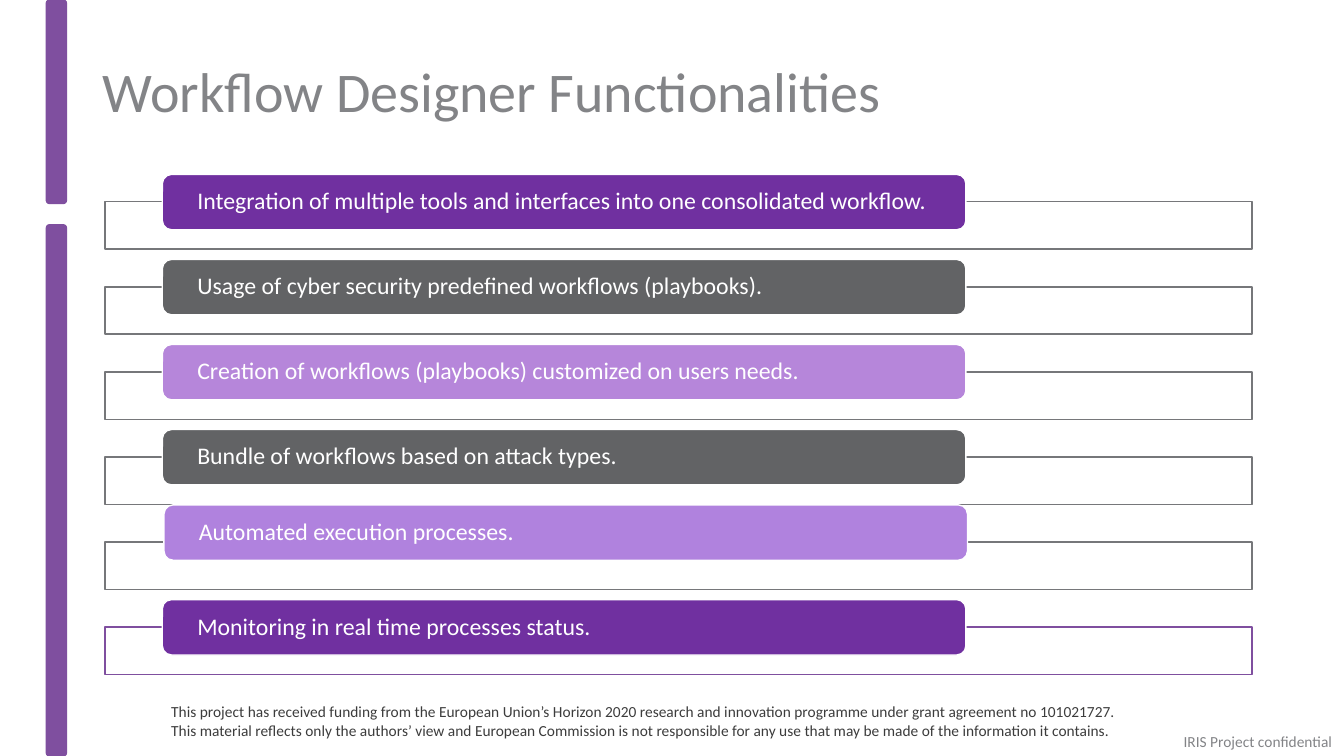
from dataclasses import dataclass

from lxml.etree import SubElement
from pptx import Presentation
from pptx.dml.color import RGBColor
from pptx.enum.shapes import MSO_SHAPE as Shape
from pptx.enum.text import MSO_ANCHOR as Anchor, MSO_AUTO_SIZE as AutoSize, PP_ALIGN as Align
from pptx.oxml.ns import qn
from pptx.shapes.autoshape import Shape as AutoShape
from pptx.slide import Slide
from pptx.text.text import TextFrame
from pptx.util import Inches, Pt

FONT = "Calibri"
WHITE = RGBColor(0xFF, 0xFF, 0xFF)
PURPLE = RGBColor(0x70, 0x30, 0xA0)
BAR_PURPLE = RGBColor(0x7F, 0x4F, 0x9F)
LILAC = RGBColor(0xB6, 0x86, 0xDA)
LAVENDER = RGBColor(0xB0, 0x82, 0xDE)
DARK_GRAY = RGBColor(0x62, 0x63, 0x65)
LINE_GRAY = RGBColor(0x76, 0x77, 0x7A)
TITLE_GRAY = RGBColor(0x83, 0x84, 0x87)
NOTE_GRAY = RGBColor(0x3C, 0x3C, 0x3C)

WIDTH, HEIGHT = Inches(13.33), Inches(7.5)
ROW_PITCH = 11.25


@dataclass(frozen=True)
class Area:
    """Percentages of the slide's width and height."""
    left: float
    top: float
    width: float
    height: float

    def moved(self, dx: float, dy: float) -> "Area":
        return Area(self.left + dx, self.top + dy, self.width, self.height)

    def emu(self) -> tuple[int, int, int, int]:
        return (int(WIDTH * self.left / 100), int(HEIGHT * self.top / 100),
                int(WIDTH * self.width / 100), int(HEIGHT * self.height / 100))


@dataclass(frozen=True)
class Feature:
    text: str
    fill: RGBColor
    line: RGBColor = LINE_GRAY
    dx: float = 0
    dy: float = 0


@dataclass(frozen=True)
class Note:
    text: str
    area: Area
    color: RGBColor
    wrap: bool


TITLE = Area(6.9, 4.93, 71.27, 15.07)
FRAME = Area(7.8, 26.7, 85.37, 6.27)
LABEL = Area(12.08, 23.07, 59.79, 7.33)
BARS = [Area(3.45, 29.73, 1.5, 70.27), Area(3.45, 0, 1.5, 26.93)]

FEATURES = [
    Feature("Integration of multiple tools and interfaces into one consolidated workflow.", PURPLE),
    Feature("Usage of cyber security predefined workflows (playbooks).", DARK_GRAY),
    Feature("Creation of workflows (playbooks) customized on users needs.", LILAC),
    Feature("Bundle of workflows based on attack types.", DARK_GRAY),
    Feature("Automated execution processes.", LAVENDER, dx=0.12, dy=-1.28),
    Feature("Monitoring in real time processes status.", PURPLE, BAR_PURPLE),
]

NOTES = [
    Note("This project has received funding from the European Union’s Horizon 2020 research and "
         "innovation programme under grant agreement no 101021727. This material reflects only "
         "the authors’ view and European Commission is not responsible for any use that may be "
         "made of the information it contains.", Area(12, 92.27, 72.54, 6), NOTE_GRAY, True),
    Note("IRIS Project confidential", Area(87.32, 96.13, 12.68, 3.87), TITLE_GRAY, False),
]


def write(tf: TextFrame, text: str, size: float, color: RGBColor, spacing: float = 1.0) -> None:
    tf.text = text
    p = tf.paragraphs[0]
    p.alignment = Align.LEFT
    p.line_spacing = spacing
    font = p.runs[0].font
    font.name, font.size = FONT, Pt(size)
    font.color.rgb = color


def add_box(s: Slide, kind: Shape, area: Area, fill: RGBColor, line: RGBColor) -> AutoShape:
    sp = s.shapes.add_shape(kind, *area.emu())
    sp.shadow.inherit = False
    sp.fill.solid()
    sp.fill.fore_color.rgb = fill
    sp.line.color.rgb = line
    sp.line.width = Pt(1)
    return sp


def add_note(s: Slide, note: Note) -> None:
    tf = s.shapes.add_textbox(*note.area.emu()).text_frame
    tf.word_wrap = note.wrap
    write(tf, note.text, 11, note.color)


def add_title(s: Slide, text: str) -> None:
    sp = s.shapes.title
    sp.left, sp.top, sp.width, sp.height = TITLE.emu()
    tf = sp.text_frame
    tf.auto_size = AutoSize.NONE
    tf.vertical_anchor = Anchor.MIDDLE
    write(tf, text, 40, TITLE_GRAY, 0.9)


def add_feature(s: Slide, row: int, feature: Feature) -> None:
    drop = row * ROW_PITCH
    frame = add_box(s, Shape.RECTANGLE, FRAME.moved(0, drop), WHITE, feature.line)
    color = frame.fill._xPr.find(qn("a:solidFill"))[0]
    SubElement(color, qn("a:alpha"), val="90000")
    label = add_box(s, Shape.ROUNDED_RECTANGLE, LABEL.moved(feature.dx, drop + feature.dy),
                    feature.fill, WHITE)
    tf = label.text_frame
    tf.word_wrap = True
    tf.vertical_anchor = Anchor.MIDDLE
    tf.margin_left = tf.margin_right = int(WIDTH * 0.024)
    tf.margin_top = tf.margin_bottom = 0
    write(tf, feature.text, 17, WHITE, 0.9)


def main() -> None:
    prs = Presentation()
    prs.slide_width, prs.slide_height = WIDTH, HEIGHT
    s = prs.slides.add_slide(prs.slide_layouts[5])
    for note in NOTES:
        add_note(s, note)
    for area in BARS:
        add_box(s, Shape.ROUNDED_RECTANGLE, area, BAR_PURPLE, BAR_PURPLE)
    add_title(s, "Workflow Designer Functionalities")
    for row, feature in enumerate(FEATURES):
        add_feature(s, row, feature)
    prs.save("out.pptx")


if __name__ == "__main__":
    main()
